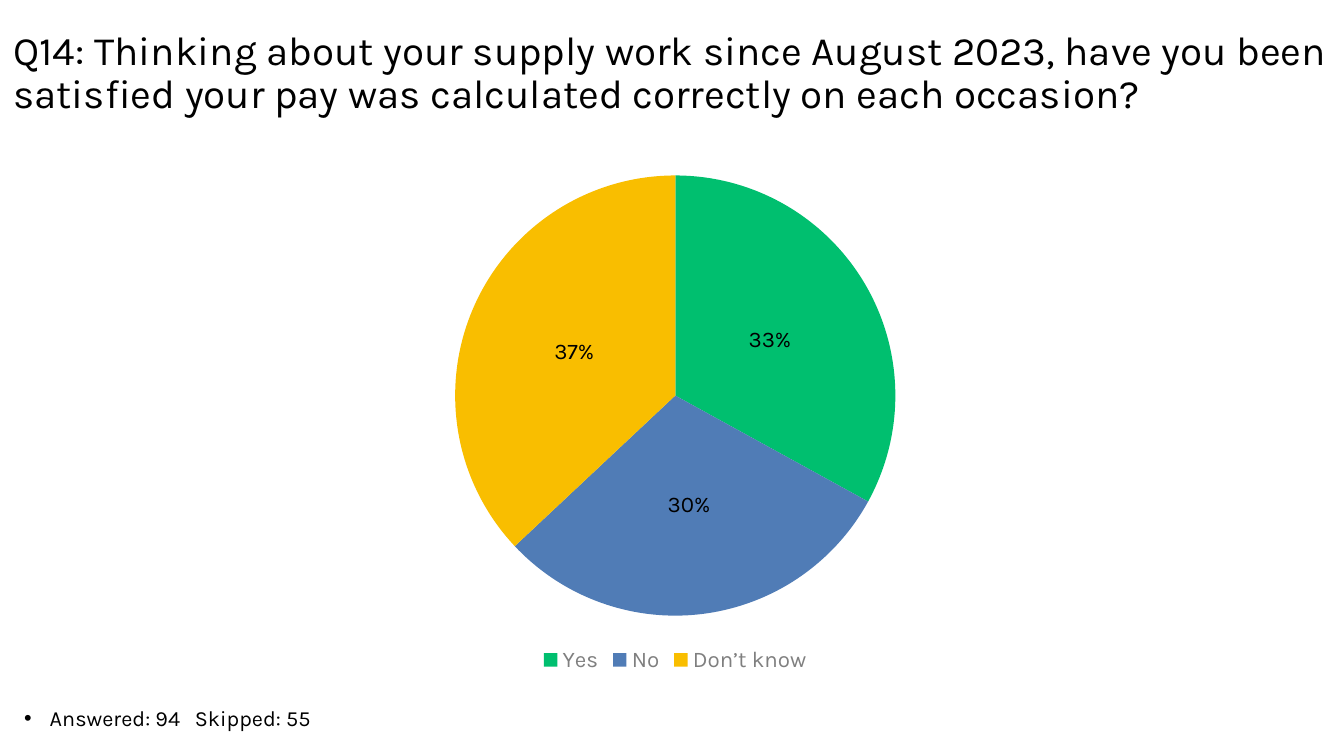
from lxml import etree
from pptx import Presentation
from pptx.chart import data
from pptx.dml import color
from pptx.enum import chart as ch, text
from pptx.oxml import ns
from pptx.util import Inches, Pt

FONT = "Karla"
COLORS = {"text": "000000", "legend": "7F7F7F", "Yes": "00BF6F", "No": "507CB6", "Don’t know": "F9BE00"}
SHARES = {"Yes": 0.33, "No": 0.30, "Don’t know": 0.37}

prs = Presentation()
prs.slide_width = Inches(10)
prs.slide_height = prs.slide_width * 9 // 16
s = prs.slides.add_slide(prs.slide_layouts[1])


def style(font, size, name="text"):
    font.name, font.size = FONT, Pt(size)
    font.color.rgb = color.RGBColor.from_string(COLORS[name])


def fill_placeholder(sp, box, anchor, spacing, size, words):
    sp.left, sp.top, sp.width, sp.height = [Inches(v) for v in box]
    tf = sp.text_frame
    tf.word_wrap = True
    tf.auto_size = text.MSO_AUTO_SIZE.NONE
    tf.vertical_anchor = anchor
    p = tf.paragraphs[0]
    p.alignment = text.PP_ALIGN.LEFT
    p.line_spacing = spacing
    r = p.add_run()
    r.text = words
    style(r.font, size)
    return p


fill_placeholder(
    s.shapes.title, (0, 0.25, 10, 0.6), text.MSO_ANCHOR.MIDDLE, 0.9, 21.6,
    "Q14: Thinking about your supply work since August 2023, have you been "
    "satisfied your pay was calculated correctly on each occasion?")

p = fill_placeholder(
    s.placeholders[1], (0.08, 5.25, 9, 0.26), text.MSO_ANCHOR.TOP, 0.7, 11.6,
    "Answered: 94\tSkipped: 55")
p.space_before = Pt(7.5)
pPr = p._p.get_or_add_pPr()
pPr.set("marL", str(Inches(0.19)))
pPr.set("indent", str(-Inches(0.19)))
etree.SubElement(pPr, ns.qn("a:buFont"), typeface="Arial")
etree.SubElement(pPr, ns.qn("a:buChar"), char="•")
tabs = etree.SubElement(pPr, ns.qn("a:tabLst"))
etree.SubElement(tabs, ns.qn("a:tab"), pos=str(Inches(1.27)), algn="l")

cd = data.CategoryChartData(number_format="0%")
cd.categories = list(SHARES)
cd.add_series("Series 1", list(SHARES.values()))
pie = s.shapes.add_chart(
    ch.XL_CHART_TYPE.PIE, Inches(1.2), Inches(1.15), Inches(7.65), Inches(3.9), cd).chart
pie.has_title = False
style(pie.font, 18)
pie.has_legend = True
pie.legend.position = ch.XL_LEGEND_POSITION.BOTTOM
pie.legend.include_in_layout = False
style(pie.legend.font, 12, "legend")

plot = pie.plots[0]
plot.vary_by_categories = True
for i, name in enumerate(SHARES):
    fill = plot.series[0].points[i].format.fill
    fill.solid()
    fill.fore_color.rgb = color.RGBColor.from_string(COLORS[name])
labels = plot.series[0].data_labels
labels.show_value = True
labels.show_percentage = False
labels.number_format, labels.number_format_is_linked = "0%", False
labels.position = ch.XL_LABEL_POSITION.CENTER
style(labels.font, 12)

area = pie._chartSpace.chart.plotArea
for old in area.findall(ns.qn("c:layout")):
    area.remove(old)
layout = etree.Element(ns.qn("c:layout"))
area.insert(0, layout)
manual = etree.SubElement(layout, ns.qn("c:manualLayout"))
for tag, val in (("layoutTarget", "inner"), ("xMode", "edge"), ("yMode", "edge"),
                 ("x", 0.28), ("y", 0.04), ("w", 0.44), ("h", 0.84)):
    etree.SubElement(manual, ns.qn("c:" + tag), val=str(val))

prs.save("out.pptx")
